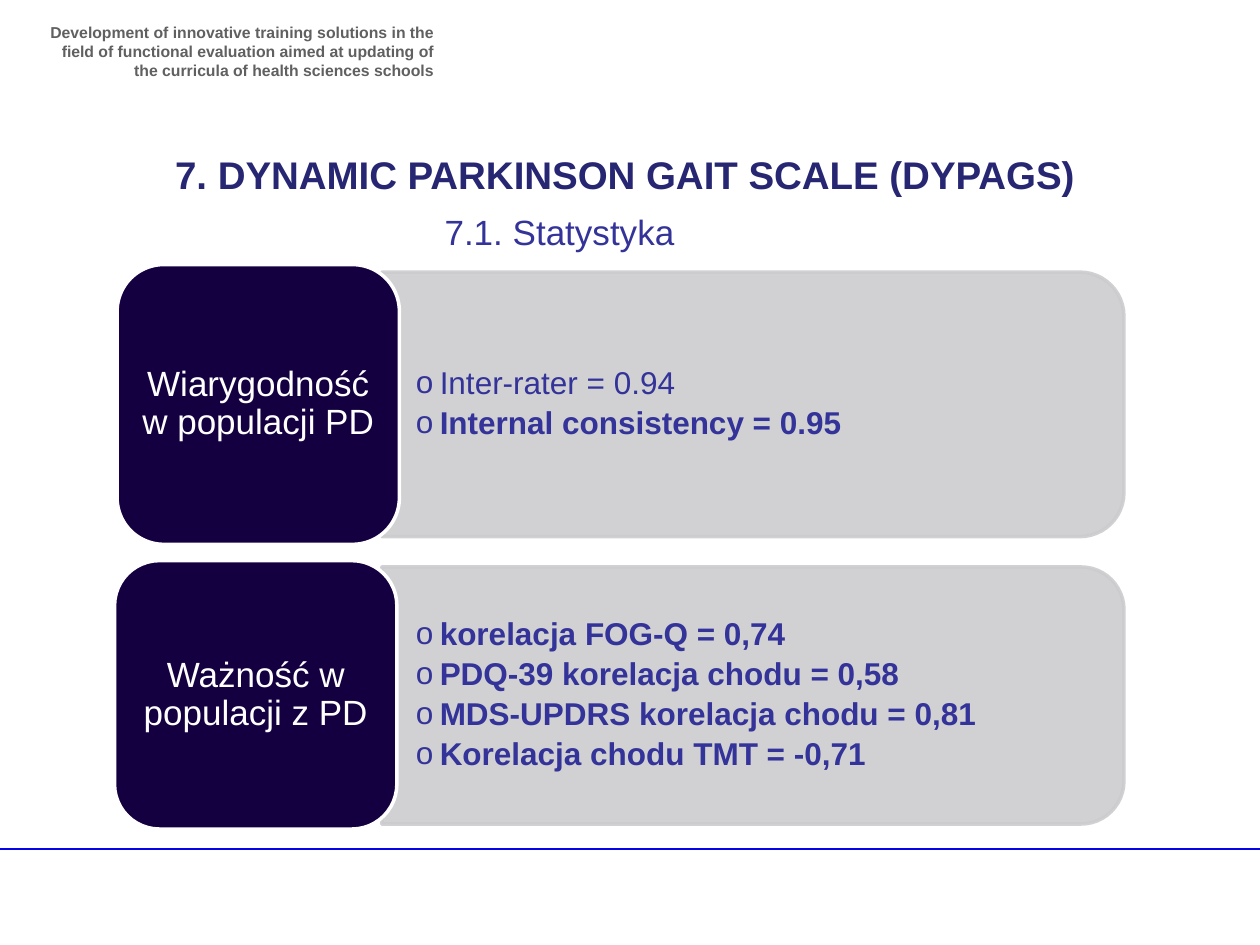
from dataclasses import dataclass

from lxml import etree
from pptx import Presentation
from pptx.dml.color import RGBColor
from pptx.enum import shapes, text
from pptx.oxml import ns
from pptx.util import Inches, Pt

FONT = "Arial"
NAVY, BLUE, GREY, WHITE = "140041", "333399", "CCCCCF", "FFFFFF"
LEFT, MID, RIGHT = text.PP_ALIGN.LEFT, text.PP_ALIGN.CENTER, text.PP_ALIGN.RIGHT
Box = tuple[float, float, float, float]


@dataclass
class Item:
    words: str
    bold: bool = True


@dataclass
class Band:
    label: str
    items: list[Item]
    tile: Box
    top: float
    height: float


BANDS = [
    Band("Wiarygodność w populacji PD",
         [Item("Inter-rater = 0.94", False), Item("Internal consistency = 0.95")],
         (0.93, 2.1, 2.24, 2.22), 2.16, 2.1),
    Band("Ważność w populacji z PD",
         [Item("korelacja FOG-Q = 0,74"),
          Item("PDQ-39 korelacja chodu = 0,58"),
          Item("MDS-UPDRS korelacja chodu = 0,81"),
          Item("Korelacja chodu TMT = -0,71")],
         (0.91, 4.45, 2.24, 2.13), 4.5, 2.04),
]
BAR_LEFT, BAR_WIDTH = 3.03, 5.89


def color(code: str) -> RGBColor:
    return RGBColor.from_string(code)


def frame(slide, box: Box, pad: tuple[float, float] = (0.1, 0.05), center: bool = False):
    """Add an empty wrapped text box and return its text frame."""
    body = slide.shapes.add_textbox(*map(Inches, box)).text_frame
    body.word_wrap = True
    body.margin_left = body.margin_right = Inches(pad[0])
    body.margin_top = body.margin_bottom = Inches(pad[1])
    body.vertical_anchor = text.MSO_ANCHOR.MIDDLE if center else text.MSO_ANCHOR.TOP
    return body


def write(para, words: str, size: float, code: str, bold: bool = False, align=LEFT) -> None:
    para.alignment = align
    run = para.add_run()
    run.text = words
    run.font.name, run.font.size, run.font.bold = FONT, Pt(size), bold
    run.font.color.rgb = color(code)


def bullet(para) -> None:
    props = para._p.get_or_add_pPr()
    indent = Inches(0.19)
    props.set("marL", str(indent))
    props.set("indent", str(-indent))
    etree.SubElement(props, ns.qn("a:buFont"), typeface=FONT)
    etree.SubElement(props, ns.qn("a:buChar"), char="o")


def block(slide, kind, box: Box, fill: str, edge: str):
    form = slide.shapes.add_shape(kind, *map(Inches, box))
    form.shadow.inherit = False
    form.fill.solid()
    form.fill.fore_color.rgb = color(fill)
    form.line.color.rgb = color(edge)
    form.line.width = Pt(2)
    return form


def draw_bar(slide, band: Band) -> None:
    """Draw the grey bar, an upright shape turned so its round end is right."""
    left = BAR_LEFT + (BAR_WIDTH - band.height) / 2
    top = band.top + (band.height - BAR_WIDTH) / 2
    bar = block(slide, shapes.MSO_SHAPE.ROUND_2_SAME_RECTANGLE,
                (left, top, band.height, BAR_WIDTH), GREY, GREY)
    bar.rotation = 90
    for tone in bar._element.spPr.iter(ns.qn("a:srgbClr")):
        etree.SubElement(tone, ns.qn("a:alpha"), val="90000")


def draw_band(slide, band: Band) -> None:
    draw_bar(slide, band)
    body = frame(slide, (BAR_LEFT, band.top + 0.1, 5.79, band.height - 0.2),
                 (0.27, 0.14), True)
    for i, item in enumerate(band.items):
        para = body.paragraphs[0] if i == 0 else body.add_paragraph()
        para.level = 1
        para.line_spacing, para.space_after = 0.9, Pt(3.5)
        bullet(para)
        write(para, item.words, 18, BLUE, item.bold)

    block(slide, shapes.MSO_SHAPE.ROUNDED_RECTANGLE, band.tile, NAVY, WHITE)
    left, top, width, height = band.tile
    para = frame(slide, (left + 0.1, top + 0.1, width - 0.2, height - 0.2),
                 (0.08, 0.04), True).paragraphs[0]
    para.line_spacing = 0.9
    write(para, band.label, 20, WHITE, align=MID)


def draw_rule(slide) -> None:
    rule = slide.shapes.add_connector(shapes.MSO_CONNECTOR.STRAIGHT, Inches(-0.05),
                                      Inches(6.74), Inches(10), Inches(6.74))
    rule.line.color.rgb = color("0404E6")
    rule.line.width = Pt(1)
    etree.SubElement(rule._element.spPr, ns.qn("a:effectLst"))


def main() -> None:
    deck = Presentation()
    deck.slide_width, deck.slide_height = Inches(10), Inches(7.5)
    slide = deck.slides.add_slide(deck.slide_layouts[6])

    draw_rule(slide)
    write(frame(slide, (0.28, 0.13, 3.26, 0.47)).paragraphs[0],
          "Development of innovative training solutions in the ﬁeld of functional "
          "evaluation aimed at updating of the curricula of health sciences schools",
          9, "606060", True, RIGHT)
    write(frame(slide, (0.67, 1.15, 8.58, 0.47)).paragraphs[0],
          "7. DYNAMIC PARKINSON GAIT SCALE (DYPAGS)", 22, "262673", True, MID)
    for band in BANDS:
        draw_band(slide, band)
    write(frame(slide, (3.43, 1.62, 3.11, 0.77)).paragraphs[0],
          "7.1. Statystyka", 20, BLUE)

    deck.save("out.pptx")


if __name__ == "__main__":
    main()
